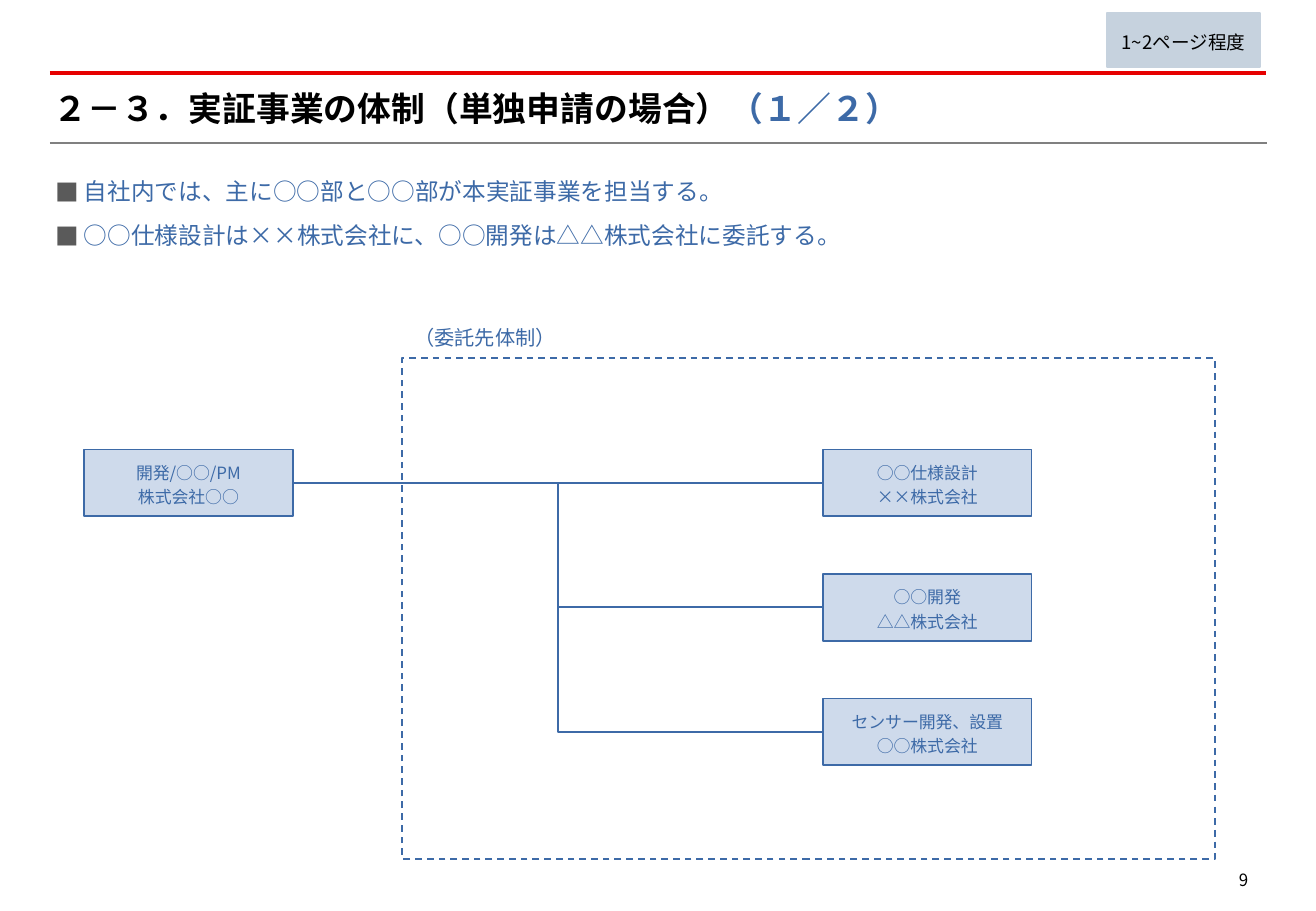
from dataclasses import dataclass
from typing import Any, NamedTuple, Optional

from lxml.etree import SubElement
from pptx import Presentation
from pptx.dml.color import RGBColor as RGB
from pptx.enum.dml import MSO_LINE
from pptx.enum.shapes import MSO_CONNECTOR as CONN, MSO_SHAPE as SHAPE
from pptx.enum.text import MSO_ANCHOR as ANCHOR, MSO_AUTO_SIZE as AUTO, PP_ALIGN as ALIGN
from pptx.oxml.ns import qn
from pptx.util import Inches, Pt


@dataclass(frozen=True)
class Theme:
    font: str = "Noto Sans CJK JP"
    black: RGB = RGB(0x00, 0x00, 0x00)
    blue: RGB = RGB(0x3D, 0x6A, 0xA7)
    pale_blue: RGB = RGB(0xCE, 0xDA, 0xEB)
    note_fill: RGB = RGB(0xC6, 0xD2, 0xDE)
    red: RGB = RGB(0xE6, 0x00, 0x00)
    grey: RGB = RGB(0x80, 0x80, 0x80)
    bullet: str = "5A5A5A"
    title_size: float = 20
    body_size: float = 14
    label_size: float = 12
    note_size: float = 11
    small_size: float = 10
    line_width: float = 1


T = Theme()


class Rect(NamedTuple):
    left: float
    top: float
    width: float
    height: float

    def lengths(self) -> list:
        return [Inches(v) for v in self]


class TextRun(NamedTuple):
    text: str
    size: float
    color: RGB
    bold: bool = False


@dataclass(frozen=True)
class Box:
    rect: Rect
    lines: tuple = ()
    fill: Optional[RGB] = T.pale_blue
    line: RGB = T.blue
    size: float = T.small_size
    color: RGB = T.blue
    dash: Any = None


@dataclass(frozen=True)
class Label:
    rect: Rect
    lines: tuple
    size: float
    color: RGB = T.blue
    align: Any = ALIGN.LEFT
    margin: Optional[float] = None
    wrap: bool = False
    bullet: str = ""
    space_before: float = 0


class Rule(NamedTuple):
    y: float
    right: float
    color: RGB
    width: float


BOX_W, BOX_H = 1.72, 0.55
OWN_X, PARTNER_X = 0.69, 6.77
FIRST_Y, ROW_PITCH = 3.7, 1.025
LEFT_EDGE = 0.41

RULES = (Rule(0.6, 10.42, T.red, 2), Rule(1.18, 10.43, T.grey, 1.25))
TITLE_RECT = Rect(0.44, 0.72, 9.91, 0.34)
TITLE_RUNS = (
    TextRun("２－３．実証事業の体制（単独申請の場合）", T.title_size, T.black, True),
    TextRun("（１／２）", T.title_size, T.blue, True),
)
LABELS = (
    Label(Rect(9.93, 7.08, 0.44, 0.28), ("9",), T.small_size, T.black, ALIGN.RIGHT),
    Label(
        Rect(0.46, 1.41, 9.91, 0.62),
        ("自社内では、主に○○部と○○部が本実証事業を担当する。",
         "○○仕様設計は××株式会社に、○○開発は△△株式会社に委託する。"),
        T.body_size, margin=0, wrap=True, bullet="■", space_before=6,
    ),
    Label(Rect(3.31, 2.59, 1.38, 0.34), ("（委託先体制）",), T.label_size),
)
PAGE_NOTE = Box(Rect(9.11, 0.11, 1.26, 0.44), ("1~2ページ程度",),
                T.note_fill, T.note_fill, T.note_size, T.black)
PARTNER_FRAME = Box(Rect(3.31, 2.95, 6.69, 4.12), fill=None, dash=MSO_LINE.DASH)
OWN_COMPANY = Box(Rect(OWN_X, FIRST_Y, BOX_W, BOX_H), ("開発/○○/PM", "株式会社○○"))
PARTNERS = (
    ("○○仕様設計", "××株式会社"),
    ("○○開発", "△△株式会社"),
    ("センサー開発、設置", "○○株式会社"),
)


def apply(obj: Any, values: dict) -> None:
    for name, value in values.items():
        setattr(obj, name, value)


def add_run(p: Any, run: TextRun) -> None:
    r = p.add_run()
    r.text = run.text
    apply(r.font, {"size": Pt(run.size), "bold": run.bold, "name": T.font})
    r.font.color.rgb = run.color
    SubElement(r.font._element, qn("a:ea"), typeface=T.font)


def add_bullet(p: Any, char: str) -> None:
    pPr = p._p.get_or_add_pPr()
    pPr.set("marL", str(Inches(0.23)))
    pPr.set("indent", str(Inches(-0.23)))
    SubElement(SubElement(pPr, qn("a:buClr")), qn("a:srgbClr"), val=T.bullet)
    SubElement(pPr, qn("a:buFont"), typeface=T.font)
    SubElement(pPr, qn("a:buChar"), char=char)


def set_frame(tf: Any, margin: Optional[float], wrap: bool, anchor: Any) -> None:
    apply(tf, {"word_wrap": wrap, "auto_size": AUTO.NONE, "vertical_anchor": anchor})
    if margin is not None:
        sides = ("left", "top", "right", "bottom")
        apply(tf, {f"margin_{side}": Inches(margin) for side in sides})


def write_lines(tf: Any, item: Any, align: Any, bullet: str = "", gap: float = 0) -> None:
    for i, text in enumerate(item.lines):
        p = tf.add_paragraph() if i else tf.paragraphs[0]
        if bullet:
            add_bullet(p, bullet)
        apply(p, {"alignment": align, "line_spacing": 1.2, "space_before": Pt(gap if i else 0)})
        add_run(p, TextRun(text, item.size, item.color))


def add_label(s: Any, label: Label) -> None:
    tf = s.shapes.add_textbox(*label.rect.lengths()).text_frame
    set_frame(tf, label.margin, label.wrap, ANCHOR.TOP)
    write_lines(tf, label, label.align, label.bullet, label.space_before)


def add_box(s: Any, box: Box) -> Any:
    sp = s.shapes.add_shape(SHAPE.RECTANGLE, *box.rect.lengths())
    sp.shadow.inherit = False
    if box.fill is None:
        sp.fill.background()
    else:
        sp.fill.solid()
        sp.fill.fore_color.rgb = box.fill
    sp.line.color.rgb = box.line
    apply(sp.line, {"width": Pt(T.line_width), "dash_style": box.dash})
    set_frame(sp.text_frame, 0.02, False, ANCHOR.MIDDLE)
    write_lines(sp.text_frame, box, ALIGN.CENTER)
    return sp


def add_line(s: Any, kind: Any, ends: tuple, color: RGB, width: float) -> Any:
    c = s.shapes.add_connector(kind, *(Inches(v) for v in ends))
    c.line.color.rgb = color
    c.line.width = Pt(width)
    SubElement(c._element.spPr, qn("a:effectLst"))
    return c


def add_title(s: Any) -> None:
    sp = s.shapes.title
    apply(sp, dict(zip(("left", "top", "width", "height"), TITLE_RECT.lengths())))
    set_frame(sp.text_frame, 0, True, ANCHOR.MIDDLE)
    p = sp.text_frame.paragraphs[0]
    apply(p, {"alignment": ALIGN.LEFT, "space_before": Pt(0)})
    for run in TITLE_RUNS:
        add_run(p, run)


def add_partners(s: Any) -> None:
    own = add_box(s, OWN_COMPANY)
    start = (OWN_X + BOX_W, FIRST_Y + BOX_H / 2)
    for i, lines in enumerate(PARTNERS):
        y = FIRST_Y + i * ROW_PITCH
        partner = add_box(s, Box(Rect(PARTNER_X, y, BOX_W, BOX_H), lines))
        kind = CONN.ELBOW if i else CONN.STRAIGHT
        c = add_line(s, kind, (*start, PARTNER_X, y + BOX_H / 2), T.blue, T.line_width)
        c.begin_connect(own, 3)
        c.end_connect(partner, 1)


def main() -> None:
    prs = Presentation()
    apply(prs, {"slide_width": Inches(10.83), "slide_height": Inches(7.5)})
    s = prs.slides.add_slide(prs.slide_layouts[5])
    for rule in RULES:
        ends = (LEFT_EDGE, rule.y, rule.right, rule.y)
        add_line(s, CONN.STRAIGHT, ends, rule.color, rule.width)
    add_title(s)
    add_box(s, PAGE_NOTE)
    add_box(s, PARTNER_FRAME)
    add_partners(s)
    for label in LABELS:
        add_label(s, label)
    prs.save("out.pptx")


if __name__ == "__main__":
    main()
